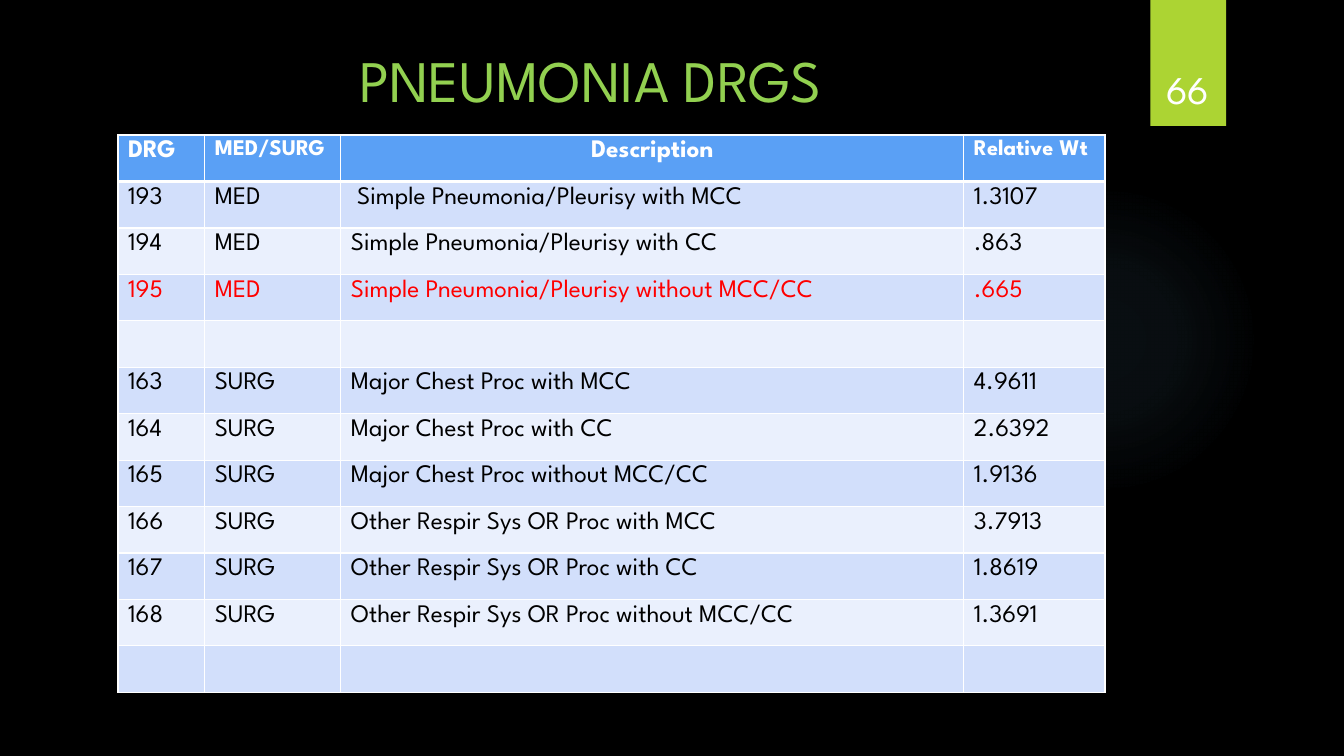
from dataclasses import dataclass

from lxml import etree
from pptx import Presentation
from pptx.dml.color import RGBColor
from pptx.enum.shapes import MSO_SHAPE
from pptx.enum.text import MSO_ANCHOR, PP_ALIGN
from pptx.oxml import parse_xml
from pptx.oxml.ns import nsdecls, qn
from pptx.util import Inches, Pt

OVAL = MSO_SHAPE.OVAL
RECTANGLE = MSO_SHAPE.RECTANGLE
CENTER = PP_ALIGN.CENTER
LEFT = PP_ALIGN.LEFT
MIDDLE = MSO_ANCHOR.MIDDLE
BOTTOM = MSO_ANCHOR.BOTTOM


@dataclass(frozen=True)
class Theme:
    font: str = "League Spartan"
    black: str = "000000"
    white: str = "FFFFFF"
    title: str = "92D050"
    badge: str = "ACD433"
    glow: str = "7AC4F0"
    header: str = "5AA0F5"
    bands: tuple = ("D2DFFB", "EAF0FD")
    alert: str = "FF0000"
    title_size: int = 42
    number_size: int = 28
    body_size: int = 18
    small_size: int = 16
    thin: int = 1
    thick: int = 3


class SlideBuilder:
    def __init__(self, deck, theme):
        self.deck = deck
        self.theme = theme
        self.page = deck.slides.add_slide(deck.slide_layouts[6])
        background = self.page.background.fill
        background.solid()
        background.fore_color.rgb = RGBColor.from_string(theme.black)

    def across(self, percent):
        return round(self.deck.slide_width * percent / 100)

    def down(self, percent):
        return round(self.deck.slide_height * percent / 100)

    def place(self, left, top, width, height):
        return self.across(left), self.down(top), self.across(width), self.down(height)

    def style(self, paragraph, size, color, bold=False, align=LEFT):
        paragraph.alignment = align
        for span in paragraph.runs:
            span.font.name = self.theme.font
            span.font.size = Pt(size)
            span.font.bold = bold
            span.font.color.rgb = RGBColor.from_string(color)

    def shape(self, kind, area, color):
        shape = self.page.shapes.add_shape(kind, *self.place(*area))
        shape.shadow.inherit = False
        shape.fill.solid()
        shape.fill.fore_color.rgb = RGBColor.from_string(color)
        shape.line.fill.background()
        return shape

    def glow(self, area, stops):
        color = self.theme.glow
        properties = self.shape(OVAL, area, color)._element.spPr
        marks = "".join(
            f'<a:gs pos="{position * 1000}"><a:srgbClr val="{color}">'
            f'<a:alpha val="{alpha * 1000}"/></a:srgbClr></a:gs>'
            for position, alpha in stops
        )
        gradient = parse_xml(
            f'<a:gradFill {nsdecls("a")} rotWithShape="1"><a:gsLst>{marks}</a:gsLst>'
            '<a:path path="circle"><a:fillToRect l="50000" t="50000" r="50000" b="50000"/>'
            "</a:path></a:gradFill>"
        )
        properties.replace(properties.find(qn("a:solidFill")), gradient)

    def badge(self, area):
        shape = self.shape(RECTANGLE, area, self.theme.badge)
        effects = shape._element.spPr.find(qn("a:effectLst"))
        effects.append(parse_xml(
            f'<a:outerShdw {nsdecls("a")} blurRad="{Pt(3)}" dist="{Pt(2)}" dir="5400000" '
            f'rotWithShape="0"><a:srgbClr val="{self.theme.black}">'
            '<a:alpha val="45000"/></a:srgbClr></a:outerShdw>'
        ))

    def text(self, area, words, size, color, anchor):
        box = self.page.shapes.add_textbox(*self.place(*area))
        frame = box.text_frame
        frame.word_wrap = True
        frame.vertical_anchor = anchor
        frame.text = words
        self.style(frame.paragraphs[0], size, color, align=CENTER)

    def border(self, cell, side, width):
        properties = cell._tc.get_or_add_tcPr()
        line = etree.SubElement(properties, qn(f"a:ln{side}"), w=str(Pt(width)))
        fill = etree.SubElement(line, qn("a:solidFill"))
        etree.SubElement(fill, qn("a:srgbClr"), val=self.theme.white)

    def cell(self, cell, words, fill, size, color, bold, align, top, bottom):
        thin = self.theme.thin
        for side, width in (("L", thin), ("R", thin), ("T", top), ("B", bottom)):
            self.border(cell, side, width)
        cell.fill.solid()
        cell.fill.fore_color.rgb = RGBColor.from_string(fill)
        cell.text_frame.text = words
        self.style(cell.text_frame.paragraphs[0], size, color, bold, align)

    def table(self, area, widths, headings, records, alerts):
        theme = self.theme
        table = self.page.shapes.add_table(
            len(records) + 1, len(widths), *self.place(*area)
        ).table
        for column, width in zip(table.columns, widths):
            column.width = self.across(width)
        for index, (words, size, align) in enumerate(headings):
            self.cell(table.cell(0, index), words, theme.header, size, theme.white,
                      True, align, theme.thin, theme.thick)
        for number, record in enumerate(records, 1):
            fill = theme.bands[(number - 1) % 2]
            color = theme.alert if record[0] in alerts else theme.black
            top = theme.thick if number == 1 else theme.thin
            for index, words in enumerate(record):
                self.cell(table.cell(number, index), words, fill, theme.body_size,
                          color, False, LEFT, top, theme.thin)


BLANK = ("", "", "", "")
RECORDS = [
    ("193", "MED", " Simple Pneumonia/Pleurisy with MCC", "1.3107"),
    ("194", "MED", "Simple Pneumonia/Pleurisy with CC", ".863"),
    ("195", "MED", "Simple Pneumonia/Pleurisy without MCC/CC", ".665"),
    BLANK,
    ("163", "SURG", "Major Chest Proc with MCC", "4.9611"),
    ("164", "SURG", "Major Chest Proc with CC", "2.6392"),
    ("165", "SURG", "Major Chest Proc without MCC/CC", "1.9136"),
    ("166", "SURG", "Other Respir Sys OR Proc with MCC", "3.7913"),
    ("167", "SURG", "Other Respir Sys OR Proc with CC", "1.8619"),
    ("168", "SURG", "Other Respir Sys OR Proc without MCC/CC", "1.3691"),
    BLANK,
]


def main():
    deck = Presentation()
    deck.slide_width, deck.slide_height = Inches(13.33), Inches(7.5)
    theme = Theme()
    slide = SlideBuilder(deck, theme)
    slide.glow((70.59, 24.4, 23.11, 41.07), ((0, 7), (36, 6), (69, 0)))
    slide.badge((85.6, 0, 5.63, 16.67))
    slide.text((5.33, 4.67, 77.19, 11.47), "PNEUMONIA DRGS",
               theme.title_size, theme.title, MIDDLE)
    headings = [
        ("DRG", theme.body_size, LEFT),
        ("MED/SURG", theme.small_size, LEFT),
        ("Description", theme.body_size, CENTER),
        ("Relative Wt", theme.small_size, LEFT),
    ]
    slide.table((8.78, 17.87, 73.44, 73.73), (6.45, 10.13, 46.36, 10.5),
                headings, RECORDS, {"195"})
    slide.text((84.92, 4.27, 6.9, 11.2), "66",
               theme.number_size, theme.white, BOTTOM)
    deck.save("out.pptx")


if __name__ == "__main__":
    main()
